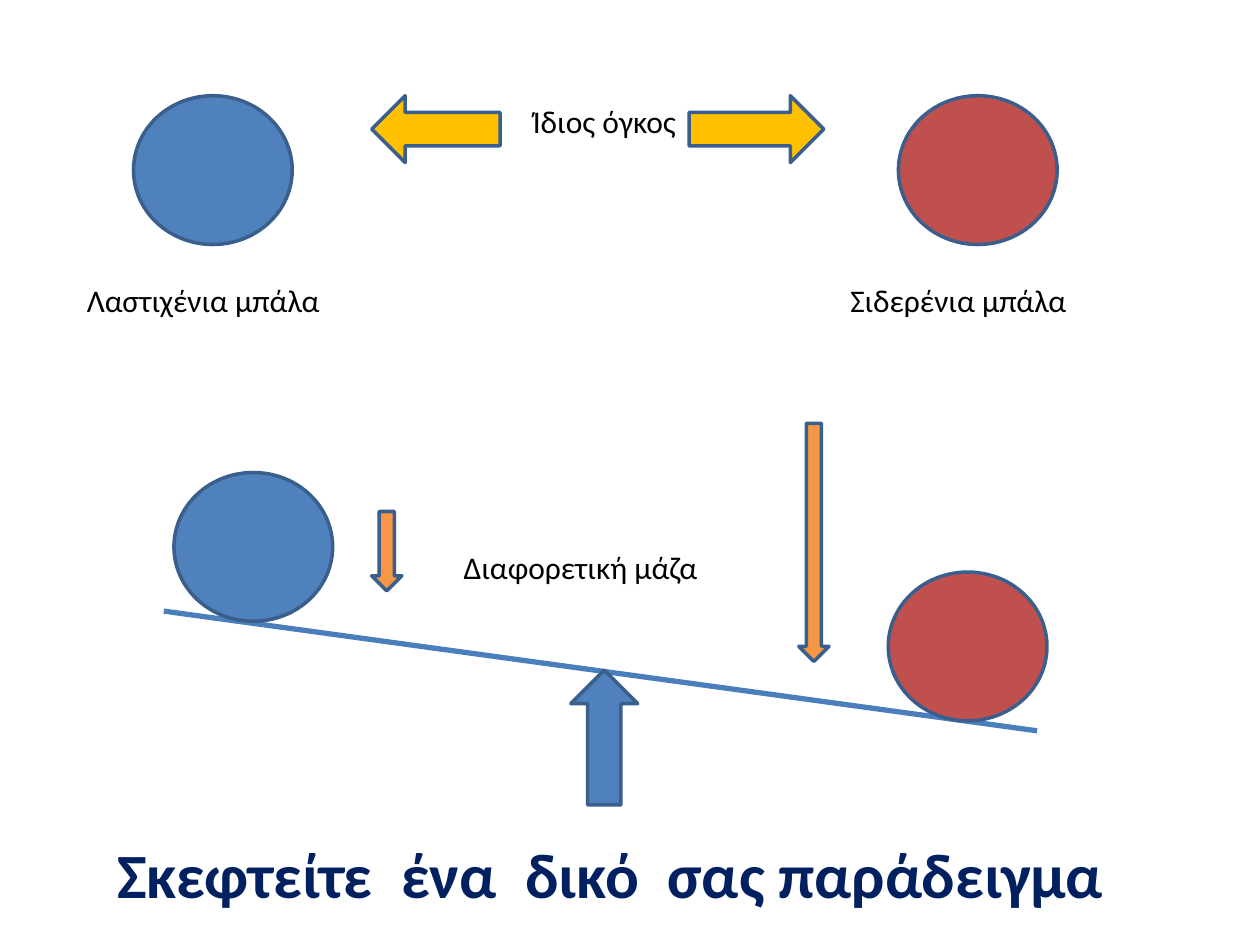
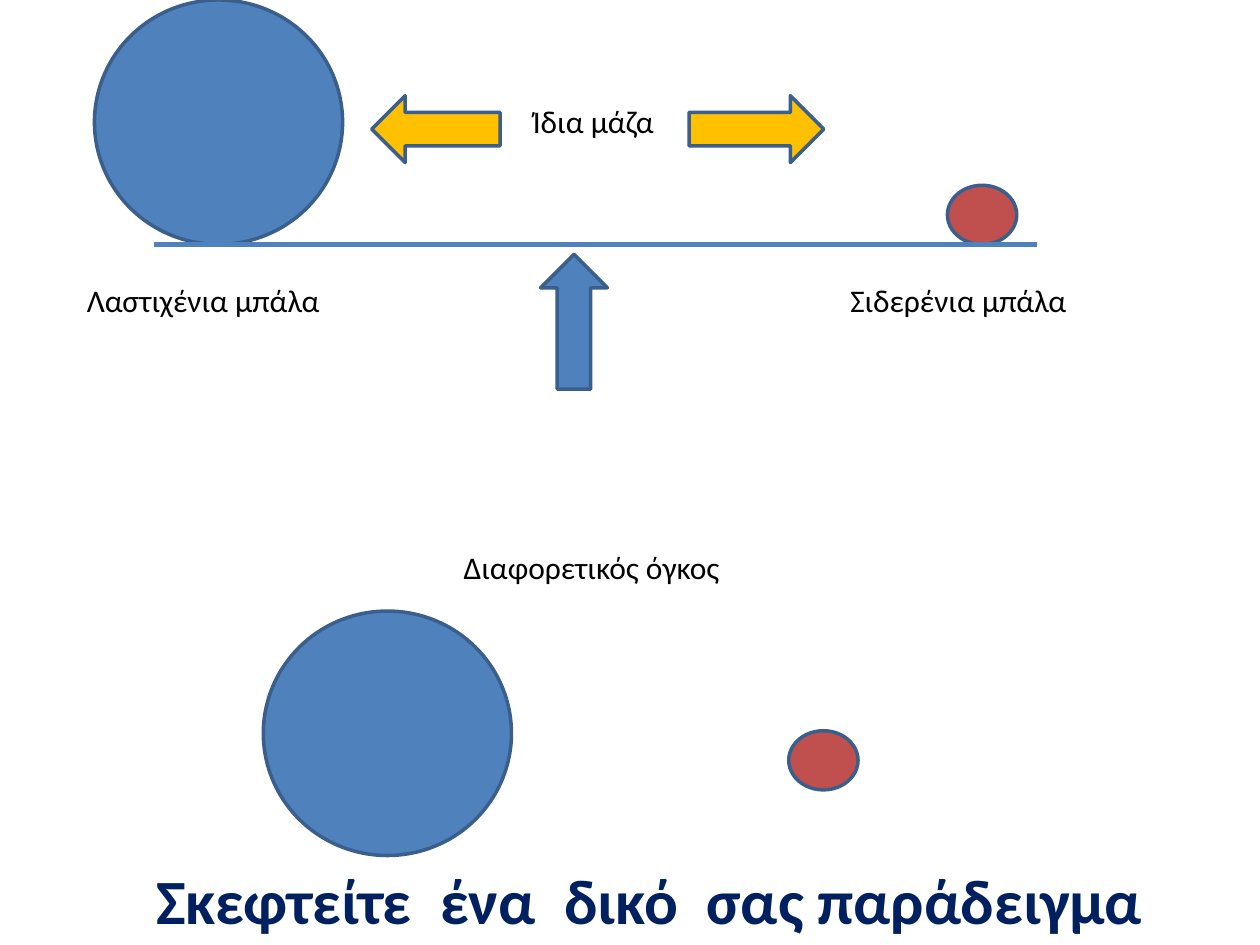
from lxml import etree
from pptx import Presentation
from pptx.dml.color import RGBColor
from pptx.enum.shapes import MSO_CONNECTOR, MSO_SHAPE as SHAPE
from pptx.enum.text import MSO_ANCHOR, MSO_AUTO_SIZE, PP_ALIGN
from pptx.oxml.ns import qn
from pptx.util import Pt

COLORS = {
    "rubber": "4F81BD",
    "iron": "C0504D",
    "same": "FFC000",
    "weight": "F79646",
    "outline": "3A5F8C",
    "tilted": "4B7EBC",
    "text": "000000",
    "title": "002060",
}
FONT = "Calibri"
QUESTION = "Σκεφτείτε  ένα  δικό  σας παράδειγμα"
BALL = (90.7, 85)
BIG_BALL = (141.8, 139.7)
SMALL_BALL = (39.6, 33.8)
SUPPORT = (38.2, 77)
TOP_ROW = 54.7
ARROW_H = 38.2
BEAM_END = 592.6


def rgb(name):
    """Return the named colour."""
    return RGBColor.from_string(COLORS[name])


def write(sp, text, size=18, color="text", bold=False):
    """Put one left-aligned line of formatted text in a shape."""
    tf = sp.text_frame
    tf.word_wrap = True
    tf.auto_size = MSO_AUTO_SIZE.NONE
    tf.vertical_anchor = MSO_ANCHOR.TOP
    p = tf.paragraphs[0]
    p.alignment = PP_ALIGN.LEFT
    r = p.add_run()
    r.text = text
    r.font.name = FONT
    r.font.size = Pt(size)
    r.font.bold = bold
    r.font.color.rgb = rgb(color)


class Deck:
    """Holds the presentation, its style and the current slide."""

    def __init__(self):
        """Start an empty 4:3 presentation."""
        self.prs = Presentation()
        self.prs.slide_width, self.prs.slide_height = Pt(720), Pt(540)

    def slide(self, title, x, y, w):
        """Add a slide with its title at the bottom."""
        self.s = self.prs.slides.add_slide(self.prs.slide_layouts[5])
        sp = self.s.shapes.title
        sp.left, sp.top, sp.width, sp.height = Pt(x), Pt(y), Pt(w), Pt(51)
        write(sp, title, size=36, color="title", bold=True)

    def shape(self, kind, x, y, size, color):
        """Add an outlined preset shape."""
        sp = self.s.shapes.add_shape(kind, Pt(x), Pt(y), *map(Pt, size))
        sp.shadow.inherit = False
        sp.fill.solid()
        sp.fill.fore_color.rgb = rgb(color)
        sp.line.color.rgb = rgb("outline")
        sp.line.width = Pt(2)

    def ball(self, x, y, size, color):
        """Add a ball."""
        self.shape(SHAPE.OVAL, x, y, size, color)

    def support(self, x, y):
        """Add the arrow that holds up the beam."""
        self.shape(SHAPE.UP_ARROW, x, y, SUPPORT, "rubber")

    def weight(self, x, y, length):
        """Add a downward arrow as long as the weight is large."""
        self.shape(SHAPE.DOWN_ARROW, x, y, (17.3, length), "weight")

    def beam(self, x1, y1, x2, y2, color):
        """Add the balance beam."""
        line = self.s.shapes.add_connector(
            MSO_CONNECTOR.STRAIGHT, Pt(x1), Pt(y1), Pt(x2), Pt(y2))
        line.line.color.rgb = rgb(color)
        line.line.width = Pt(3)
        etree.SubElement(line._element.spPr, qn("a:effectLst"))

    def label(self, text, x, y, w):
        """Add a plain text label."""
        write(self.s.shapes.add_textbox(Pt(x), Pt(y), Pt(w), Pt(29)), text)

    def comparison(self, same, different):
        """Add the ball names, what they share and what differs."""
        self.label("Λαστιχένια μπάλα", 42.5, 157, 187)
        self.label("Σιδερένια μπάλα", 478.8, 157, 164)
        self.shape(SHAPE.RIGHT_ARROW, 393.8, TOP_ROW, (77, ARROW_H), "same")
        self.shape(SHAPE.LEFT_ARROW, 212.4, TOP_ROW, (73.4, ARROW_H), "same")
        self.label(same, 297.4, TOP_ROW, 113)
        self.label(different, 257.8, 309.6, 198.7)


def same_volume(deck):
    """Build the slide on equal volume and different mass."""
    deck.slide(QUESTION, 59.8, 473.8, 629.3)
    deck.ball(76.3, TOP_ROW, BALL, "rubber")
    deck.ball(513.4, TOP_ROW, BALL, "iron")
    deck.comparison("Ίδιος όγκος", "Διαφορετική μάζα")
    deck.beam(93.6, 349.2, BEAM_END, 417.6, "tilted")
    deck.support(326.2, 383)
    deck.ball(507.6, 326.9, BALL, "iron")
    deck.ball(99.4, 270, BALL, "rubber")
    deck.weight(212.4, 292.3, 45.4)
    deck.weight(456.5, 241.9, 136.1)


def same_mass(deck):
    """Build the slide on equal mass and different volume."""
    beam_y = BIG_BALL[1]
    deck.slide(QUESTION, 82.1, 488.9, 590)
    deck.ball(54, 0, BIG_BALL, "rubber")
    deck.ball(541.4, beam_y - SMALL_BALL[1], SMALL_BALL, "iron")
    deck.comparison("Ίδια μάζα", "Διαφορετικός όγκος")
    deck.support(308.9, 145.4)
    deck.beam(87.8, beam_y, BEAM_END, beam_y, "rubber")
    deck.ball(150.5, 349.2, BIG_BALL, "rubber")
    deck.ball(450.7, 417.6, SMALL_BALL, "iron")


def main():
    """Build and save the presentation."""
    deck = Deck()
    same_volume(deck)
    same_mass(deck)
    deck.prs.save("out.pptx")


if __name__ == "__main__":
    main()
